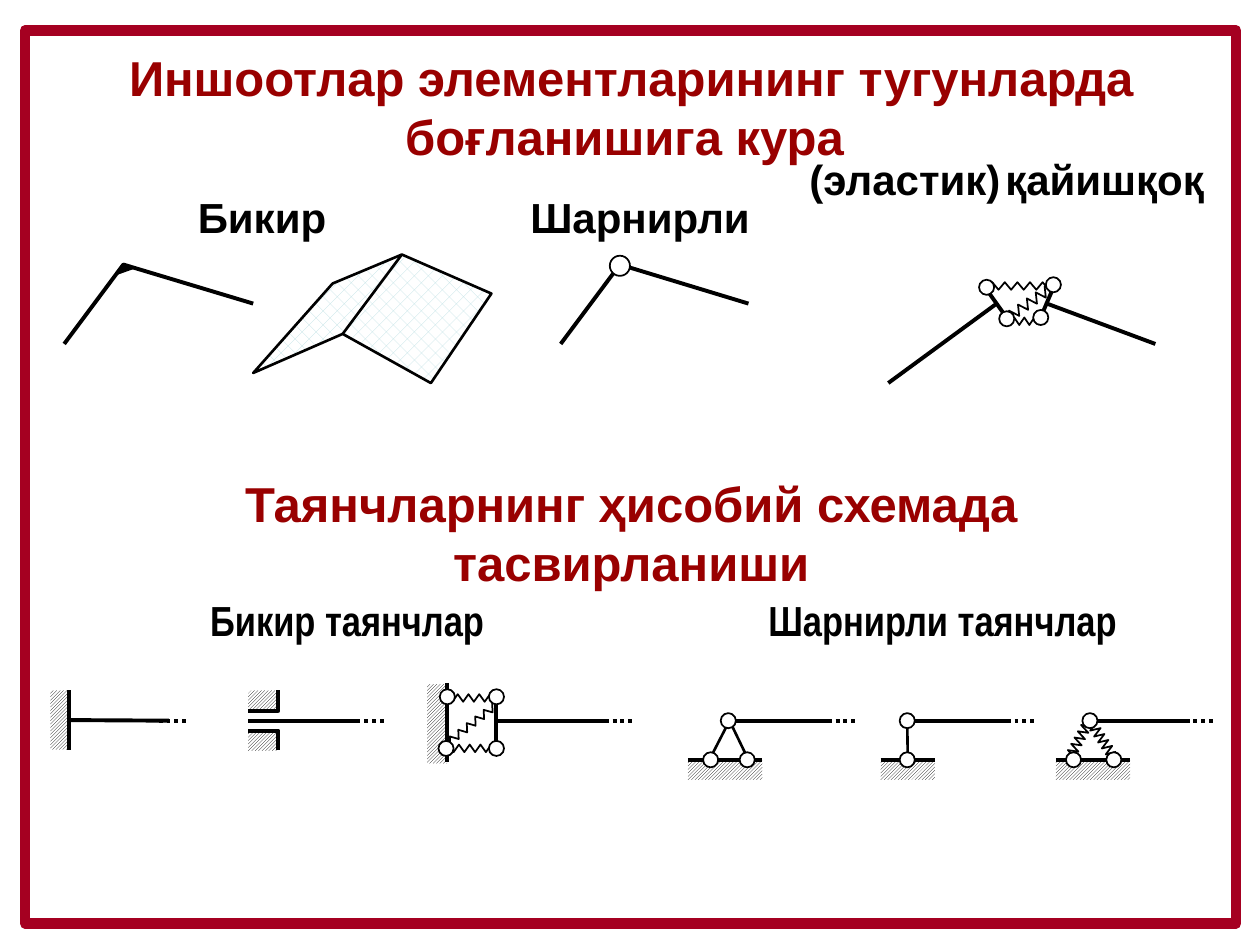
import math

import pptx
import pptx.dml.color
import pptx.enum.dml
import pptx.enum.shapes
import pptx.enum.text
import pptx.oxml
import pptx.util
from pptx.util import Inches

BLACK = "000000"
WHITE = "FFFFFF"
DARK_RED = "990000"
HINGE_SIZE = 0.12
BEAM_Y = 5.72
GROUND_Y = 6.03
PATTERN = pptx.enum.dml.MSO_PATTERN


def color(value):
    return pptx.dml.color.RGBColor.from_string(value)


def style_line(line, width, value=BLACK):
    line.color.rgb = color(value)
    line.width = pptx.util.Pt(width)


def style_pattern(shape, pattern, foreground):
    shape.fill.patterned()
    shape.fill.pattern = pattern
    shape.fill.fore_color.rgb = color(foreground)
    shape.fill.back_color.rgb = color(WHITE)


def style_fill(shape, value):
    shape.fill.solid()
    shape.fill.fore_color.rgb = color(value)


def write_text(shape, parts, size, value, font="Arial"):
    frame = shape.text_frame
    frame.word_wrap = True
    frame.auto_size = pptx.enum.text.MSO_AUTO_SIZE.NONE
    paragraph = frame.paragraphs[0]
    paragraph.alignment = pptx.enum.text.PP_ALIGN.CENTER
    paragraph.font.name = font
    paragraph.font.size = pptx.util.Pt(size)
    paragraph.font.bold = True
    paragraph.font.color.rgb = color(value)
    for part in parts:
        run = paragraph.add_run()
        run.text = part
        if part == " ":
            run.font.size = pptx.util.Pt(10)


def add_label(slide, left, top, width, parts, font="Arial"):
    box = slide.shapes.add_textbox(Inches(left), Inches(top), Inches(width), Inches(0.5))
    write_text(box, parts, 24, BLACK, font)


def add_heading(slide, text):
    box = slide.shapes.add_textbox(Inches(0.51), Inches(3.6), Inches(9), Inches(1.25))
    write_text(box, [text], 28, DARK_RED)
    box.text_frame.vertical_anchor = pptx.enum.text.MSO_ANCHOR.MIDDLE


def add_title(slide, text):
    title = slide.shapes.title
    title.left, title.top = Inches(0.51), Inches(0.22)
    title.width, title.height = Inches(9), Inches(1.25)
    write_text(title, [text], 28, DARK_RED)
    title.text_frame.vertical_anchor = pptx.enum.text.MSO_ANCHOR.MIDDLE


def add_bar(slide, start, end, width=2.25, dotted=False):
    ends = [Inches(value) for value in (*start, *end)]
    bar = slide.shapes.add_connector(pptx.enum.shapes.MSO_CONNECTOR.STRAIGHT, *ends)
    style_line(bar.line, width)
    if dotted:
        bar.line.dash_style = pptx.enum.dml.MSO_LINE.ROUND_DOT
    properties = bar._element.spPr
    properties.append(properties.makeelement(pptx.oxml.ns.qn("a:effectLst"), {}))
    return bar


def add_outline(slide, points, width, closed=False):
    scaled = [(Inches(x), Inches(y)) for x, y in points]
    builder = slide.shapes.build_freeform(*scaled[0])
    builder.add_line_segments(scaled[1:], close=closed)
    shape = builder.convert_to_shape()
    shape.shadow.inherit = False
    shape.fill.background()
    style_line(shape.line, width)
    return shape


def add_spring(slide, center, length, height, angle=0, count=12):
    cosine, sine = math.cos(math.radians(angle)), math.sin(math.radians(angle))
    points = []
    for index in range(count):
        x = length * (index / (count - 1) - 0.5)
        y = height / 2 * (-1) ** index
        points.append((center[0] + x * cosine - y * sine, center[1] + x * sine + y * cosine))
    add_outline(slide, points, 1)


def add_preset(slide, kind, left, top, width, height):
    shape = slide.shapes.add_shape(
        kind, Inches(left), Inches(top), Inches(width), Inches(height)
    )
    shape.shadow.inherit = False
    return shape


def add_hinge(slide, x, y, size=HINGE_SIZE):
    oval = pptx.enum.shapes.MSO_SHAPE.OVAL
    hinge = add_preset(slide, oval, x - size / 2, y - size / 2, size, size)
    style_fill(hinge, WHITE)
    style_line(hinge.line, 1)


def add_hatch(slide, left, top, width, height):
    hatch = add_preset(slide, pptx.enum.shapes.MSO_SHAPE.RECTANGLE, left, top, width, height)
    style_pattern(hatch, PATTERN.LIGHT_UPWARD_DIAGONAL, BLACK)
    hatch.line.fill.background()
    return hatch


def add_ground(slide, left, width):
    hatch = add_hatch(slide, left, GROUND_Y, width, 0.16)
    add_bar(slide, (left, GROUND_Y), (left + width, GROUND_Y))
    return hatch


def add_beam(slide, start, end, tail_end):
    beam = add_bar(slide, (start, BEAM_Y), (end, BEAM_Y))
    add_bar(slide, (tail_end - 0.24, BEAM_Y), (tail_end, BEAM_Y), dotted=True)
    return beam


def add_frame(slide):
    frame = add_preset(slide, pptx.enum.shapes.MSO_SHAPE.RECTANGLE, 0.2, 0.24, 9.61, 7.09)
    frame.fill.background()
    style_line(frame.line, 6, "A50021")


def draw_rigid_joint(slide):
    add_outline(slide, [(0.51, 2.73), (0.98, 2.1), (2.01, 2.41)], 2.25)
    plates = [(2.72, 2.65), (2.01, 2.96), (2.64, 2.25), (3.19, 2.02), (3.9, 2.33), (3.42, 3.04)]
    style_pattern(add_outline(slide, plates, 1.5, True), PATTERN.PERCENT_25, "BBE0E3")
    add_bar(slide, (3.19, 2.02), (2.72, 2.65), 1.5)
    corner = add_outline(slide, [(0.92, 2.18), (0.97, 2.1), (1.06, 2.13)], 0.75, True)
    style_fill(corner, BLACK)


def draw_hinged_joint(slide):
    add_outline(slide, [(4.45, 2.73), (4.92, 2.1), (5.94, 2.41)], 2.25)
    add_hinge(slide, 4.92, 2.11, 0.16)


def draw_elastic_joint(slide):
    for start, end in [
        ((7.05, 3.04), (7.91, 2.41)),
        ((8.31, 2.41), (9.17, 2.73)),
        ((7.81, 2.27), (8.01, 2.55)),
        ((8.37, 2.26), (8.25, 2.54)),
    ]:
        add_bar(slide, start, end)
    add_spring(slide, (8.1, 2.27), 0.55, 0.06)
    add_spring(slide, (8.13, 2.55), 0.24, 0.06, count=7)
    add_spring(slide, (8.19, 2.39), 0.47, 0.08, 325.6)
    for x, y in [(7.83, 2.28), (7.99, 2.53), (8.26, 2.52), (8.36, 2.26)]:
        add_hinge(slide, x, y)


def draw_rigid_supports(slide):
    wall = add_hatch(slide, 0.4, 5.48, 0.16, 0.47)
    add_beam(slide, 0.55, 1.34, 1.5).begin_connect(wall, 3)
    add_bar(slide, (0.55, 5.48), (0.55, 5.95))

    add_beam(slide, 1.97, 2.84, 3.07)
    for top, inner, outer in [(5.48, 5.64, 5.48), (5.8, 5.8, 5.95)]:
        add_hatch(slide, 1.97, top, 0.24, 0.16)
        add_outline(slide, [(1.97, inner), (2.21, inner), (2.21, outer)], 2.25)

    add_beam(slide, 3.94, 4.81, 5.04)
    add_hatch(slide, 3.39, 5.43, 0.16, 0.63)
    add_bar(slide, (3.55, 5.42), (3.55, 6.05))
    add_bar(slide, (3.94, 5.48), (3.94, 5.95))
    for center, angle in [((3.74, 5.54), 0), ((3.75, 5.94), 0), ((3.74, 5.75), 321.8)]:
        add_spring(slide, center, 0.47, 0.06, angle)
    for x, y in [(3.55, 5.53), (3.94, 5.53), (3.94, 5.94), (3.54, 5.94)]:
        add_hinge(slide, x, y)


def draw_hinged_supports(slide):
    for start, end in [(5.79, 6.57), (7.2, 7.99), (8.62, 9.41)]:
        add_beam(slide, start, end, end + 0.24)
    add_ground(slide, 5.46, 0.59)
    middle_ground = add_ground(slide, 6.99, 0.43)
    add_ground(slide, 8.38, 0.59)
    for foot in (5.63, 5.94):
        add_bar(slide, (5.79, BEAM_Y), (foot, GROUND_Y), 1.5)
    add_bar(slide, (7.2, BEAM_Y), (7.2, GROUND_Y), 1.5).end_connect(middle_ground, 0)
    add_spring(slide, (8.57, 5.86), 0.31, 0.08, 297.8)
    add_spring(slide, (8.74, 5.86), 0.31, 0.08, 56.8)
    for top, feet in [(5.78, (5.64, 5.93)), (7.2, (7.2,)), (8.65, (8.52, 8.84))]:
        add_hinge(slide, top, BEAM_Y)
        for foot in feet:
            add_hinge(slide, foot, GROUND_Y)


def main():
    presentation = pptx.Presentation()
    presentation.slide_width, presentation.slide_height = Inches(10), Inches(7.5)
    slide = presentation.slides.add_slide(presentation.slide_layouts[5])
    add_title(slide, "Иншоотлар элементларининг тугунларда боғланишига кура ")
    draw_rigid_joint(slide)
    add_label(slide, 0.9, 1.47, 2.36, ["Бикир"])
    draw_hinged_joint(slide)
    add_label(slide, 3.9, 1.47, 2.36, ["Шарнирли"])
    draw_elastic_joint(slide)
    add_label(slide, 6.18, 1.17, 3.62, ["(эластик)", " ", "қайишқоқ"])
    add_heading(slide, "Таянчларнинг ҳисобий схемада тасвирланиши")
    add_label(slide, 0.08, 4.67, 5.35, ["Бикир таянчлар"], "Arial Narrow")
    add_label(slide, 5.47, 4.67, 4.02, ["Шарнирли таянчлар"], "Arial Narrow")
    draw_rigid_supports(slide)
    draw_hinged_supports(slide)
    add_frame(slide)
    presentation.save("out.pptx")


if __name__ == "__main__":
    main()
